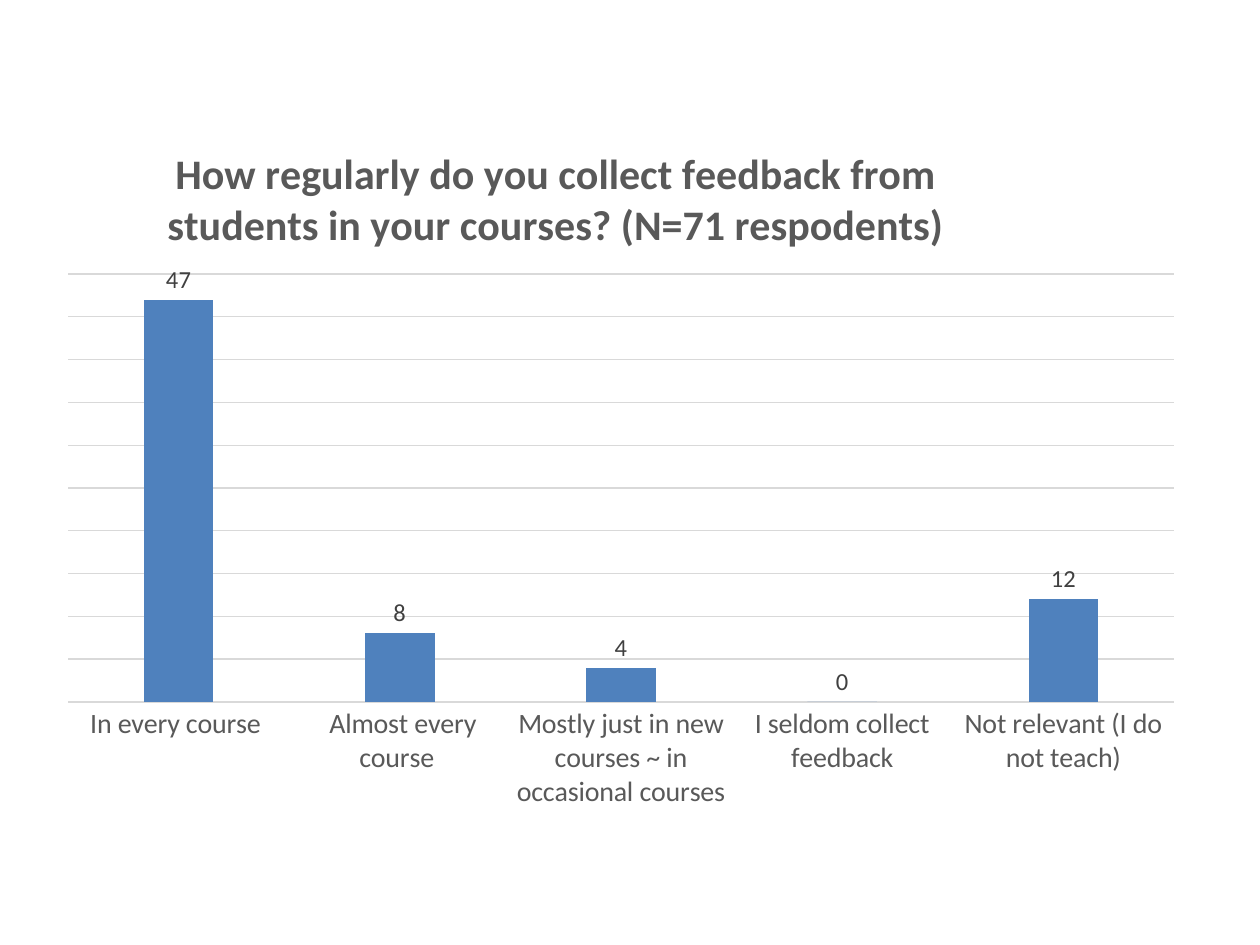
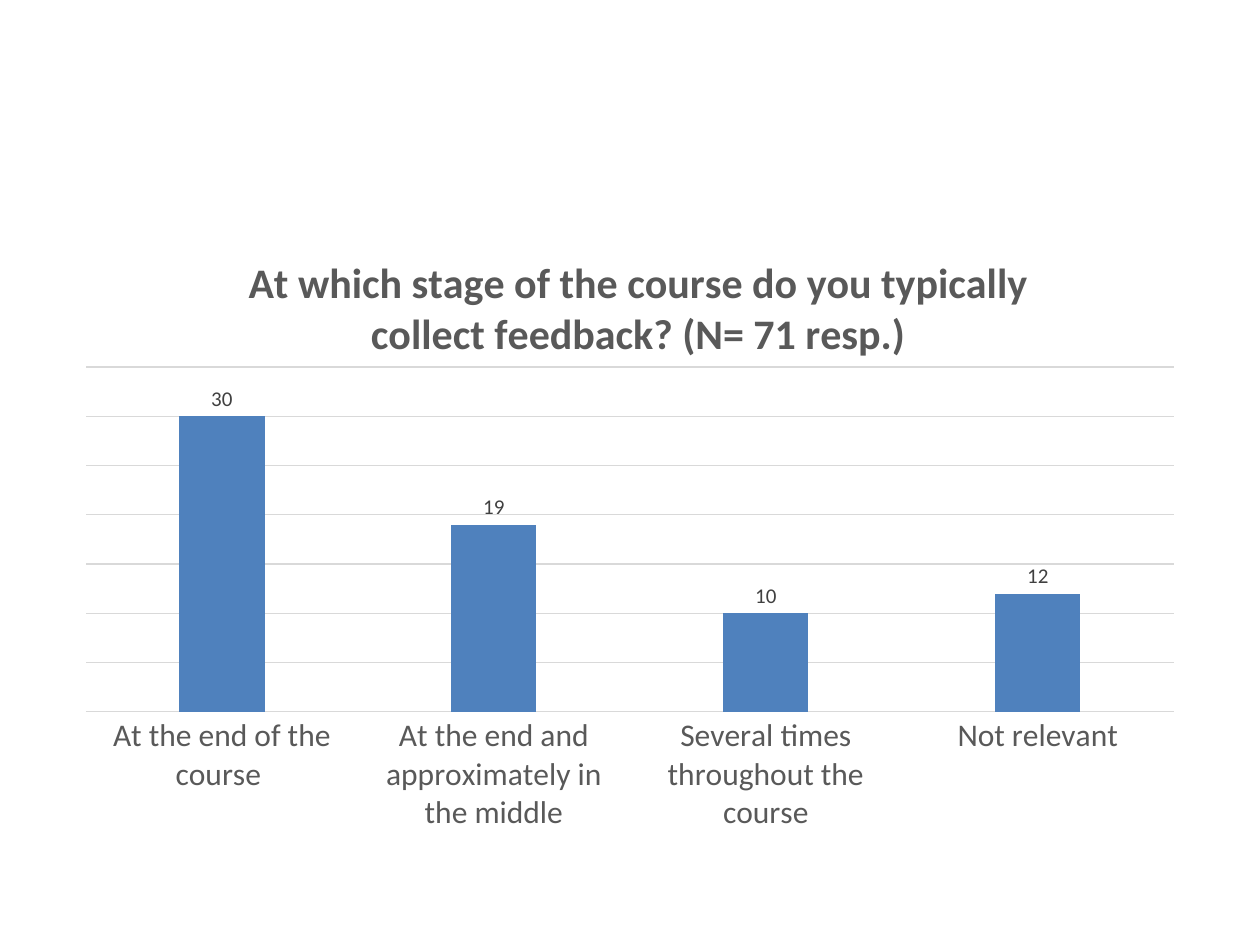
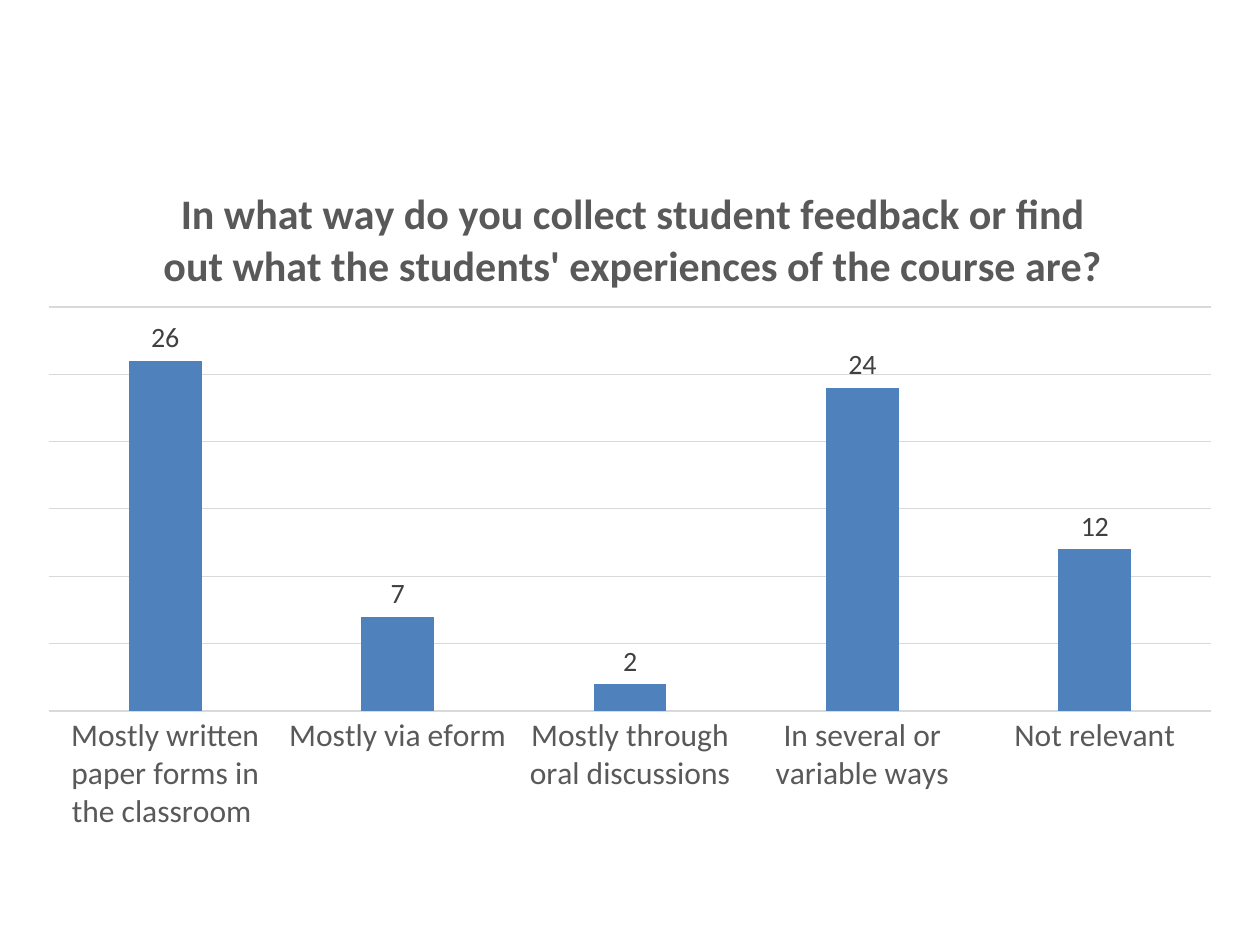
from lxml import etree
from pptx import Presentation
from pptx.chart.data import CategoryChartData
from pptx.dml.color import RGBColor
from pptx.enum.chart import XL_CHART_TYPE as ChartType
from pptx.enum.chart import XL_LABEL_POSITION as LabelPosition
from pptx.enum.chart import XL_TICK_MARK as TickMark
from pptx.oxml.ns import qn
from pptx.util import Pt

# Shared style
BLACK = RGBColor(0x00, 0x00, 0x00)
TEXT_GREY = RGBColor(0x59, 0x59, 0x59)
LABEL_GREY = RGBColor(0x40, 0x40, 0x40)
LINE_GREY = RGBColor(0xD9, 0xD9, 0xD9)
BAR_BLUE = RGBColor(0x4F, 0x81, 0xBD)
FONT = "Calibri"

# One chart per slide; frame and plot are left, top, width, height in points
QUESTIONS = [
    {
        "title": "How regularly do you collect feedback from students in your courses? "
                 "(N=71 respodents)",
        "answers": [
            ("In every course ", 47),
            (" Almost every course ", 8),
            ("Mostly just in new courses ~ in occasional courses ", 4),
            ("I seldom collect feedback", 0),
            ("Not relevant (I do not teach)", 12),
        ],
        "frame": (25.2, 71.3, 658.8, 398.9),
        "plot": (38.9, 156.6, 632, 244.6),
        "title_at": (91.4, 78.3),
        "maximum": 50, "category_size": 16, "label_size": 14,
    },
    {
        "title": "At which stage of the course do you typically collect feedback? "
                 "(N= 71 resp.)",
        "answers": [
            ("At the end of the course ", 30),
            ("At the end and approximately in the middle", 19),
            ("Several times throughout the course", 10),
            ("Not relevant", 12),
        ],
        "frame": (36, 126, 648, 356.4),
        "plot": (49.1, 209.7, 621.7, 197.1),
        "title_at": (137.7, 140.6),
        "maximum": 35, "category_size": 18, "label_size": 12,
    },
    {
        "title": "In what way do you collect student feedback or find out what "
                 "the students' experiences of the course are?",
        "answers": [
            ("Mostly written paper forms in the classroom ", 26),
            ("Mostly via eform ", 7),
            ("Mostly through oral discussions", 2),
            ("In several or variable ways", 24),
            ("Not relevant", 12),
        ],
        "frame": (14.4, 82.8, 691.9, 399.6),
        "plot": (28, 175.4, 664, 230.9),
        "title_at": (89.1, 101.7),
        "maximum": 30, "category_size": 18, "label_size": 16,
    },
]


def style_font(font, size, color, bold=False):
    font.name = FONT
    font.size = Pt(size)
    font.bold = bold
    font.color.rgb = color


def place(element, position, box, frame):
    """Fix a chart part at a box given in slide points."""
    for old_layout in element.findall(qn("c:layout")):
        element.remove(old_layout)
    layout = etree.Element(qn("c:layout"))
    element.insert(position, layout)
    manual = etree.SubElement(layout, qn("c:manualLayout"))
    settings = [("xMode", "edge"), ("yMode", "edge"),
                ("x", (box[0] - frame[0]) / frame[2]),
                ("y", (box[1] - frame[1]) / frame[3])]
    if len(box) == 4:
        settings.insert(0, ("layoutTarget", "inner"))
        settings += [("w", box[2] / frame[2]), ("h", box[3] / frame[3])]
    for name, value in settings:
        etree.SubElement(manual, qn("c:" + name)).set("val", str(value))


presentation = Presentation()
presentation.slide_width = Pt(720)
presentation.slide_height = Pt(540)

for question in QUESTIONS:
    slide = presentation.slides.add_slide(presentation.slide_layouts[6])
    frame = question["frame"]

    # Chart and its data
    chart_data = CategoryChartData()
    chart_data.categories = [answer for answer, count in question["answers"]]
    chart_data.add_series("Series 1", [count for answer, count in question["answers"]])
    chart = slide.shapes.add_chart(
        ChartType.COLUMN_CLUSTERED, *[Pt(length) for length in frame], chart_data).chart
    chart.has_legend = False
    style_font(chart.font, 10, BLACK)

    # Title
    chart.has_title = True
    text_frame = chart.chart_title.text_frame
    text_frame.text = question["title"]
    style_font(text_frame.paragraphs[0].runs[0].font, 24, TEXT_GREY, bold=True)
    chart.chart_title.include_in_layout = False

    # Axes
    category_axis = chart.category_axis
    category_axis.major_tick_mark = TickMark.NONE
    category_axis.minor_tick_mark = TickMark.NONE
    style_font(category_axis.tick_labels.font, question["category_size"], TEXT_GREY)
    value_axis = chart.value_axis
    value_axis.visible = False
    value_axis.minimum_scale = 0
    value_axis.maximum_scale = question["maximum"]
    value_axis.major_unit = 5
    for line in (category_axis.format.line, value_axis.major_gridlines.format.line):
        line.color.rgb = LINE_GREY
        line.width = Pt(0.75)

    # Bars and value labels
    plot = chart.plots[0]
    plot.vary_by_categories = False
    plot.gap_width = 219
    plot.overlap = -27
    series = plot.series[0]
    series.format.fill.solid()
    series.format.fill.fore_color.rgb = BAR_BLUE
    labels = series.data_labels
    labels.show_value = True
    labels.position = LabelPosition.OUTSIDE_END
    style_font(labels.font, question["label_size"], LABEL_GREY)

    # Positions of title and plot
    chart_space = chart.element if hasattr(chart, "element") else chart._chartSpace
    place(chart_space.find(".//" + qn("c:title")), 1, question["title_at"], frame)
    place(chart_space.find(".//" + qn("c:plotArea")), 0, question["plot"], frame)

presentation.save("out.pptx")
